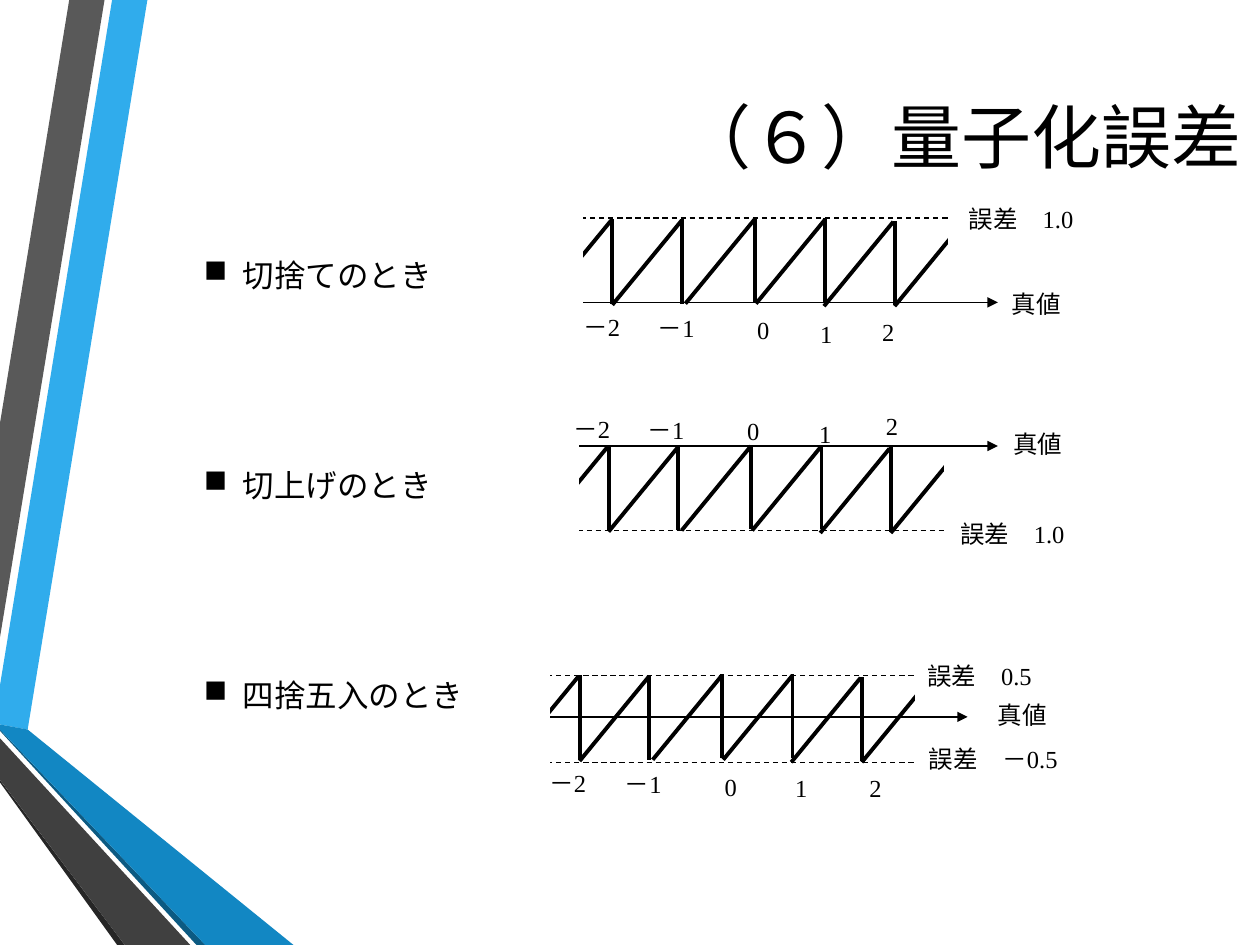
from dataclasses import dataclass

from pptx import Presentation
from pptx.dml.color import RGBColor
from pptx.enum.dml import MSO_LINE
from pptx.enum.shapes import MSO_CONNECTOR, MSO_SHAPE
from pptx.enum.text import MSO_ANCHOR, PP_ALIGN
from pptx.oxml.ns import qn
from pptx.util import Inches, Pt
from lxml import etree

STRAIGHT = MSO_CONNECTOR.STRAIGHT
RECTANGLE = MSO_SHAPE.RECTANGLE
DASH = MSO_LINE.DASH
MIDDLE = MSO_ANCHOR.MIDDLE
LEFT, RIGHT = PP_ALIGN.LEFT, PP_ALIGN.RIGHT


@dataclass(frozen=True)
class Theme:
    ink: str = "000000"
    paper: str = "FFFFFF"
    sky: str = "30ACEC"
    blue: str = "1287C3"
    deep_blue: str = "0C5A82"
    gray: str = "595959"
    dark_gray: str = "404040"
    near_black: str = "262626"
    title_font: str = "Calibri"
    text_font: str = "Times New Roman"
    title_size: float = 40
    body_size: float = 18
    label_size: float = 14
    thin: float = 0.75
    mask_edge: float = 1.25
    thick: float = 2.25


@dataclass(frozen=True)
class ErrorChart:
    left: float
    top: float
    axis_y: float
    axis_left: float
    dash_left: float
    dash_ys: tuple
    mask_top: float
    ticks: tuple
    error_label: tuple


TICK_NAMES = ("－2", "－1", "0", "1", "2")
# Each tooth: x offset of the rise, x offset of the drop after it, y offset
TEETH = ((0, 0.56, 0.01), (0.56, 1.11, 0.01), (1.14, 1.69, 0),
         (1.7, 2.25, 0), (2.24, 2.8, 0.02), (2.8, None, 0.02))
TOOTH_WIDTH, TOOTH_HEIGHT = 0.55, 0.67
AXIS_LENGTH, DASH_LENGTH = 3.62, 3.26
LABEL_SIZE = (0.62, 0.38)

CHARTS = (
    ErrorChart(4.27, 3.53, 3.54, 4.3, 4.37, (4.21,), 3.51,
               ((4.55, 3.21), (5.14, 3.22), (5.93, 3.23), (6.5, 3.25), (7.03, 3.19)),
               ("誤差　1.0", 7.62, 4.06, 0.85, 0.35)),
    ErrorChart(4.04, 5.35, 5.69, 4.06, 4.2, (6.05, 5.36), 5.26,
               ((4.36, 6.02), (4.96, 6.03), (5.75, 6.05), (6.31, 6.06), (6.9, 6.06)),
               ("誤差　0.5", 7.36, 5.2, 0.94, 0.32)),
    ErrorChart(4.3, 1.73, 2.4, 4.3, 4.47, (1.73,), 1.7,
               ((4.63, 2.4), (5.22, 2.41), (6.01, 2.43), (6.51, 2.46), (7, 2.44)),
               ("誤差　1.0", 7.69, 1.51, 0.98, 0.45)),
)

EXTRA_LABELS = (
    ("真値", 8.03, 2.22, *LABEL_SIZE),
    ("真値", 8.04, 3.33, *LABEL_SIZE),
    ("誤差　－0.5", 7.37, 5.84, 1.11, 0.36),
    ("真値", 7.92, 5.48, *LABEL_SIZE),
)


class SlideBuilder:
    def __init__(self, slide, theme):
        self.shapes = slide.shapes
        self.theme = theme

    def ribbon(self, color, points):
        corners = [(Inches(x), Inches(y)) for x, y in points]
        builder = self.shapes.build_freeform(*corners[0])
        builder.add_line_segments(corners[1:], close=True)
        band = builder.convert_to_shape()
        band.shadow.inherit = False
        band.fill.solid()
        band.fill.fore_color.rgb = RGBColor.from_string(color)
        band.line.fill.background()

    def line(self, x1, y1, x2, y2, width, dashed=False, arrow=False):
        stroke = self.shapes.add_connector(
            STRAIGHT, Inches(x1), Inches(y1), Inches(x2), Inches(y2))
        stroke.line.color.rgb = RGBColor.from_string(self.theme.ink)
        stroke.line.width = Pt(width)
        if dashed:
            stroke.line.dash_style = DASH
        if arrow:
            etree.SubElement(stroke.line._get_or_add_ln(), qn("a:tailEnd"), type="triangle")
        etree.SubElement(stroke._element.spPr, qn("a:effectLst"))

    def mask(self, left, top, width, height):
        """Cover the cut end of a waveform."""
        paper = RGBColor.from_string(self.theme.paper)
        cover = self.shapes.add_shape(
            RECTANGLE, Inches(left), Inches(top), Inches(width), Inches(height))
        cover.shadow.inherit = False
        cover.fill.solid()
        cover.fill.fore_color.rgb = paper
        cover.line.color.rgb = paper
        cover.line.width = Pt(self.theme.mask_edge)

    def text(self, words, left, top, width, height, size, font, align=LEFT, inset=True):
        frame = self.shapes.add_textbox(
            Inches(left), Inches(top), Inches(width), Inches(height)).text_frame
        frame.word_wrap = True
        frame.vertical_anchor = MIDDLE
        if not inset:
            frame.margin_left = frame.margin_right = 0
            frame.margin_top = frame.margin_bottom = 0
        frame.text = words
        for paragraph in frame.paragraphs:
            paragraph.alignment = align
            for run in paragraph.runs:
                run.font.size = Pt(size)
                run.font.name = font
                run.font.color.rgb = RGBColor.from_string(self.theme.ink)
        return frame

    def label(self, words, left, top, width, height):
        self.text(words, left, top, width, height,
                  self.theme.label_size, self.theme.text_font, inset=False)

    def bullets(self, items, left, top, width, height, gap):
        frame = self.text("\n".join(items), left, top, width, height,
                          self.theme.body_size, self.theme.text_font)
        for index, paragraph in enumerate(frame.paragraphs):
            paragraph.space_before = Pt(gap if index else 0)
            properties = paragraph._p.get_or_add_pPr()
            properties.set("marL", str(Inches(0.31)))
            properties.set("indent", str(-Inches(0.31)))
            etree.SubElement(properties, qn("a:buChar"), char="■")

    def error_chart(self, chart):
        thin, thick = self.theme.thin, self.theme.thick
        for y in chart.dash_ys:
            self.line(chart.dash_left, y, chart.dash_left + DASH_LENGTH, y, thin, dashed=True)
        for name, (x, y) in zip(TICK_NAMES, chart.ticks):
            self.label(name, x, y, *LABEL_SIZE)
        for rise, drop, shift in TEETH:
            x, peak = chart.left + rise, chart.top + shift
            self.line(x, peak + 0.01 + TOOTH_HEIGHT, x + TOOTH_WIDTH, peak + 0.01, thick)
            if drop is not None:
                x = chart.left + drop
                self.line(x, peak + TOOTH_HEIGHT, x, peak, thick)
        self.mask(chart.left + 3.23, chart.mask_top, 0.34, 0.88)
        self.line(chart.axis_left, chart.axis_y, chart.axis_left + AXIS_LENGTH,
                  chart.axis_y, thin, arrow=True)
        self.mask(chart.left - 0.1, chart.top - 0.1, 0.42, 0.95)
        self.label(*chart.error_label)


def main():
    theme = Theme()
    deck = Presentation()
    deck.slide_width, deck.slide_height = Inches(10), Inches(7.5)
    page = SlideBuilder(deck.slides.add_slide(deck.slide_layouts[6]), theme)

    ribbons = (
        (theme.sky, ((0, 5.44), (0, 5.75), (0.22, 5.79), (1.17, 0), (0.89, 0))),
        (theme.gray, ((0.83, 0), (0.55, 0), (0, 3.36), (0, 5.06))),
        (theme.near_black, ((0, 6.19), (0, 6.21), (0.93, 7.5), (0.99, 7.5))),
        (theme.deep_blue, ((0, 5.79), (0, 5.8), (1.56, 7.5), (1.63, 7.5))),
        (theme.blue, ((0, 5.79), (1.63, 7.5), (2.33, 7.5), (0.22, 5.79), (0, 5.75))),
        (theme.dark_gray, ((0, 6.19), (0.99, 7.5), (1.51, 7.5), (0, 5.86))),
    )
    for color, points in ribbons:
        page.ribbon(color, points)

    page.text("（６）量子化誤差", 1.52, 0.46, 8.43, 1.23,
              theme.title_size, theme.title_font, RIGHT)
    page.bullets(("切捨てのとき", "切上げのとき", "四捨五入のとき"),
                 1.52, 0.73, 7.49, 6.24, gap=98.5)
    for chart in CHARTS:
        page.error_chart(chart)
    for extra in EXTRA_LABELS:
        page.label(*extra)

    deck.save("out.pptx")


if __name__ == "__main__":
    main()
